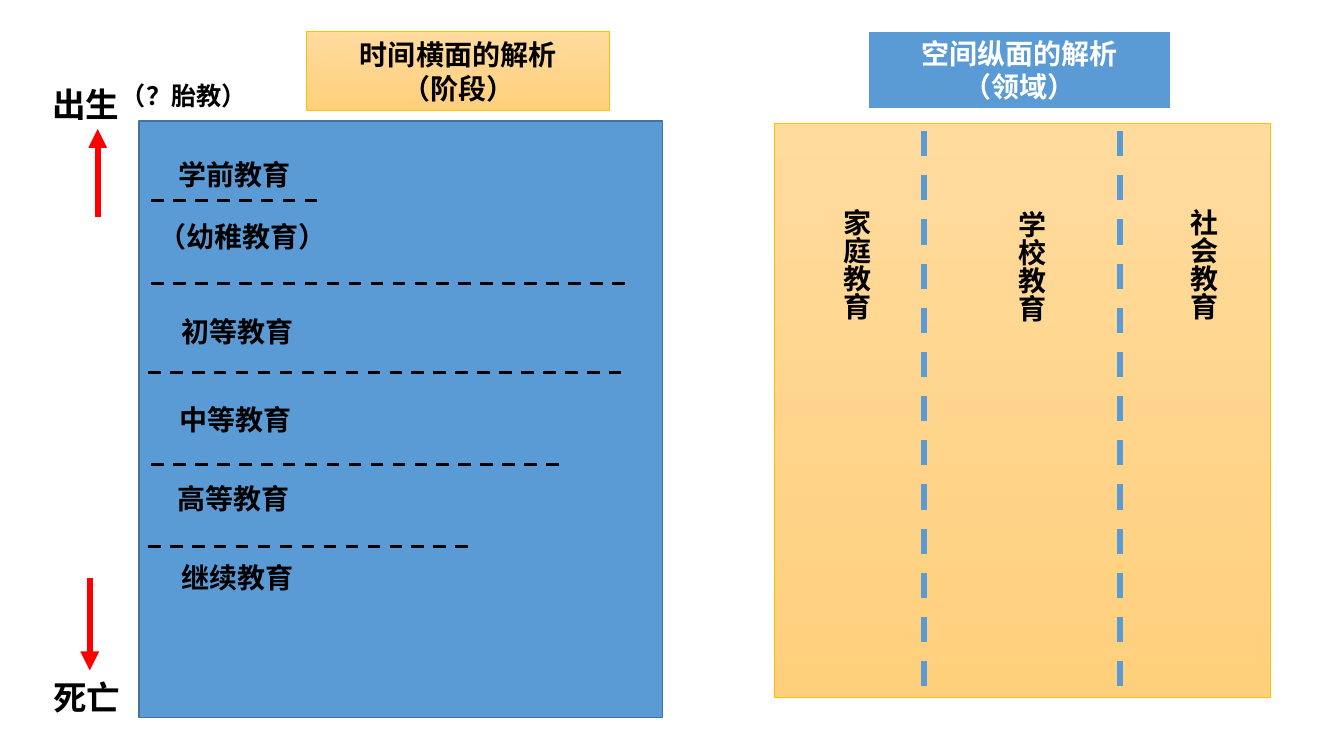
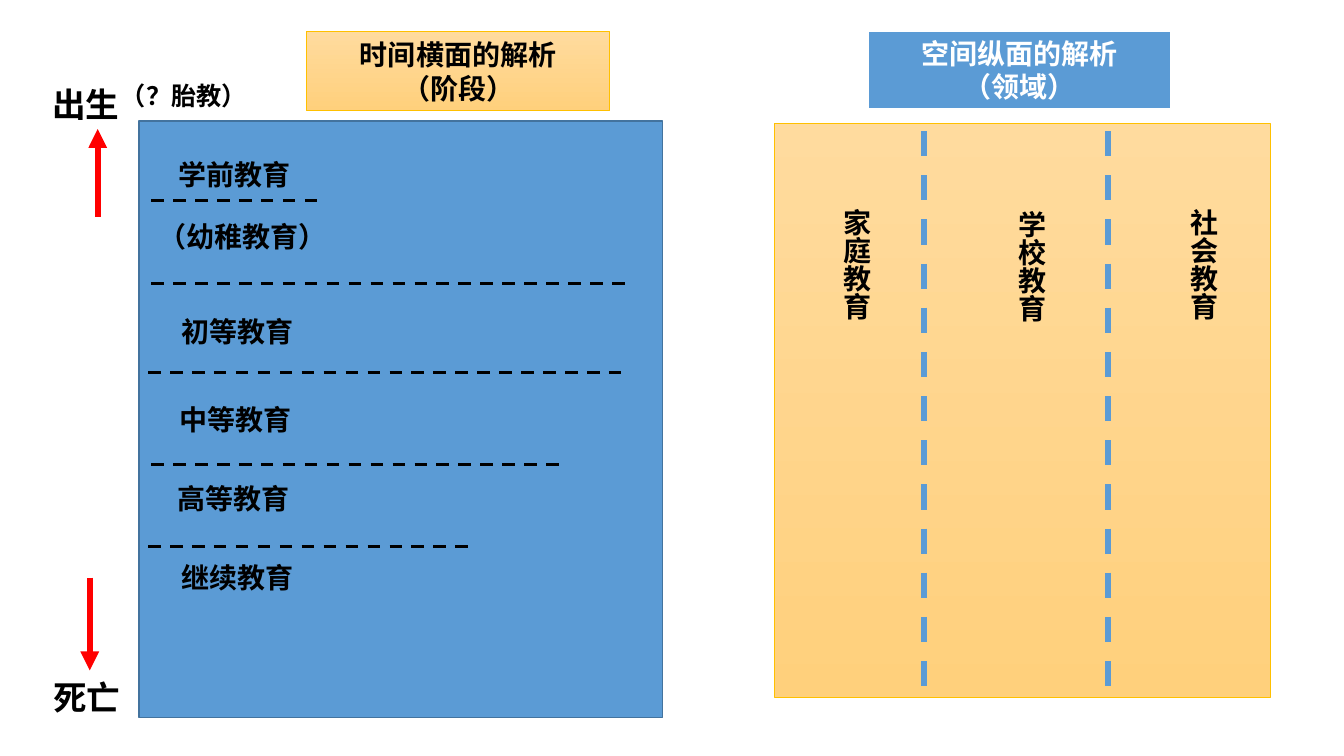
"""Build two slides that analyse education by life stage and by domain."""
from lxml import etree
from pptx import Presentation
from pptx.dml.color import RGBColor
from pptx.enum.dml import MSO_LINE
from pptx.enum.shapes import MSO_CONNECTOR, MSO_SHAPE
from pptx.enum.text import MSO_AUTO_SIZE, PP_ALIGN
from pptx.oxml.ns import qn
from pptx.util import Pt

RECTANGLE = MSO_SHAPE.RECTANGLE
STRAIGHT = MSO_CONNECTOR.STRAIGHT
DASH = MSO_LINE.DASH
LEFT, CENTER = PP_ALIGN.LEFT, PP_ALIGN.CENTER
FIT_SHAPE = MSO_AUTO_SIZE.SHAPE_TO_FIT_TEXT

FONT = "Noto Sans CJK SC"
BLACK = RGBColor(0x00, 0x00, 0x00)
WHITE = RGBColor(0xFF, 0xFF, 0xFF)
RED = RGBColor(0xFF, 0x00, 0x00)
BLUE = RGBColor(0x5B, 0x9B, 0xD5)
DARK_BLUE = RGBColor(0x43, 0x73, 0x9E)
GOLD = RGBColor(0xFF, 0xC0, 0x00)
LIGHT_ORANGE = RGBColor(0xFF, 0xDB, 0x9E)
ORANGE = RGBColor(0xFF, 0xD0, 0x7C)

BOXES = [
    (99.4, 86.4, 373.7, 426.2, [BLUE], DARK_BLUE, 1, "", BLACK),
    (553, 87.8, 354.2, 410.4, [LIGHT_ORANGE, ORANGE], GOLD, 0.5, "", BLACK),
    (218.9, 22.3, 216.7, 56.9, [LIGHT_ORANGE, ORANGE], GOLD, 0.5,
     "时间横面的解析\n（阶段）", BLACK),
    (619.9, 22.3, 216.7, 55.4, [BLUE], WHITE, 1.5,
     "空间纵面的解析\n（领域）", WHITE),
]
LABELS = [
    ("学前教育", 120.2, 108.7, 115.9, 32.4, 20),
    ("（幼稚教育）", 105.8, 153.4, 151.9, 32.4, 20),
    ("初等教育", 122.4, 221, 115.9, 32.4, 20),
    ("中等教育", 121, 283.7, 115.9, 32.4, 20),
    ("高等教育", 119.5, 340.6, 115.9, 32.4, 20),
    ("继续教育", 122.4, 396.7, 115.9, 32.4, 20),
    ("出生", 30.2, 56.2, 67, 36, 24),
    ("死亡", 31, 480.2, 67, 36, 24),
    ("（？胎教）", 79.2, 54, 108.7, 28.8, 18),
]
DOMAINS = [("家庭教育", 588.2, 141.8), ("学校教育", 713.5, 143.3), ("社会教育", 836.6, 141.8)]
STAGE_LINES = [
    (108, 229, 143.3),
    (108, 447.8, 202.3),
    (105.8, 445.7, 266.4),
    (108, 400.3, 331.9),
    (105.8, 339.8, 390.2),
]
LIFE_ARROWS = [(69.8, 154.8, 92.2), (64.1, 412.6, 478.8)]
FIRST_DIVIDER = 660.2
SECOND_DIVIDERS = [799.9, 791.3]


def write_text(shape, text, size, color, alignment):
    """Set bold text in the shared font."""
    shape.text_frame.text = text
    shape.text_frame.word_wrap = True
    for paragraph in shape.text_frame.paragraphs:
        paragraph.alignment = alignment
        for run in paragraph.runs:
            run.font.size = Pt(size)
            run.font.bold = True
            run.font.color.rgb = color
            run.font.name = FONT
            etree.SubElement(run.font._element, qn("a:ea"), typeface=FONT)


def draw_line(slide, start, end, color, width, arrow=False):
    """Draw a dashed divider, or a solid line with an arrowhead."""
    connector = slide.shapes.add_connector(STRAIGHT, *map(Pt, start + end))
    connector.line.color.rgb = color
    connector.line.width = Pt(width)
    if arrow:
        etree.SubElement(connector.line._get_or_add_ln(), qn("a:tailEnd"), type="triangle")
    else:
        connector.line.dash_style = DASH
    etree.SubElement(connector._element.spPr, qn("a:effectLst"))


presentation = Presentation()
presentation.slide_width = Pt(960)
presentation.slide_height = Pt(540)

for second_divider in SECOND_DIVIDERS:
    slide = presentation.slides.add_slide(presentation.slide_layouts[6])

    for left, top, width, height, fills, outline, weight, text, color in BOXES:
        box = slide.shapes.add_shape(RECTANGLE, Pt(left), Pt(top), Pt(width), Pt(height))
        box.shadow.inherit = False
        if len(fills) == 1:
            box.fill.solid()
            box.fill.fore_color.rgb = fills[0]
        else:
            box.fill.gradient()
            box.fill.gradient_angle = 270
            for stop, fill in zip(box.fill.gradient_stops, fills):
                stop.color.rgb = fill
        box.line.color.rgb = outline
        box.line.width = Pt(weight)
        if text:
            write_text(box, text, 20, color, CENTER)

    for text, left, top, width, height, size in LABELS:
        label = slide.shapes.add_textbox(Pt(left), Pt(top), Pt(width), Pt(height))
        write_text(label, text, size, BLACK, LEFT)
        label.text_frame.auto_size = FIT_SHAPE

    for text, left, top in DOMAINS:
        label = slide.shapes.add_textbox(Pt(left), Pt(top), Pt(38.9), Pt(173.5))
        write_text(label, text, 20, BLACK, LEFT)
        label.text_frame._txBody.bodyPr.set("vert", "eaVert")

    for left, right, y in STAGE_LINES:
        draw_line(slide, (left, y), (right, y), BLACK, 2.25)
    for x, start, end in LIFE_ARROWS:
        draw_line(slide, (x, start), (x, end), RED, 4.5, arrow=True)
    for x in (FIRST_DIVIDER, second_divider):
        draw_line(slide, (x, 93.6), (x, 498.2), BLUE, 4.5)

presentation.save("out.pptx")
